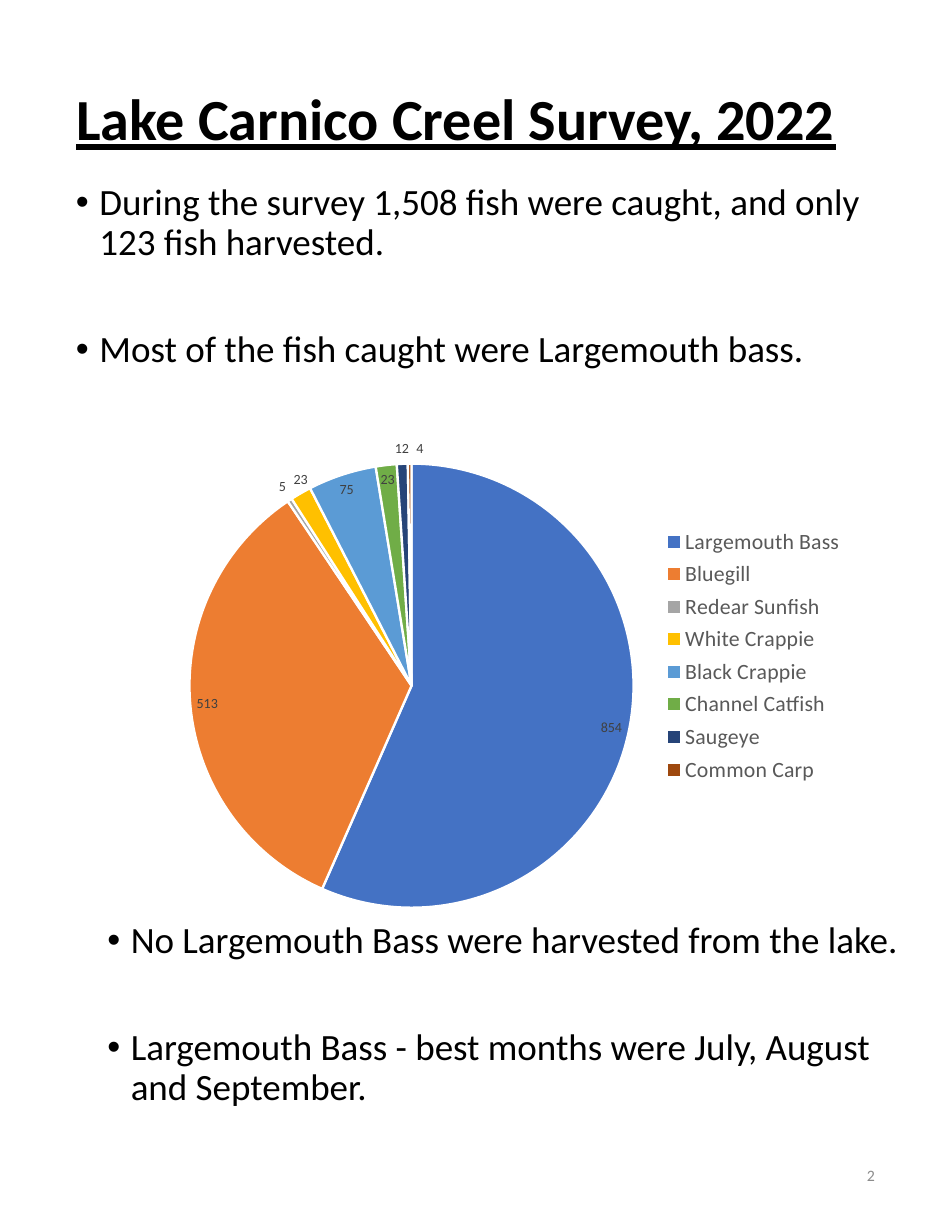
"""Build the Lake Carnico creel survey slide with its catch pie chart."""
from lxml import etree
from pptx import Presentation
from pptx.chart.data import CategoryChartData
from pptx.dml.color import RGBColor
from pptx.enum import chart as ch, text as t
from pptx.oxml import parse_xml
from pptx.oxml.ns import nsdecls, qn
from pptx.util import Inches, Pt

BLACK = RGBColor(0x00, 0x00, 0x00)
WHITE = RGBColor(0xFF, 0xFF, 0xFF)
PAGE_GREY = RGBColor(0x8C, 0x8C, 0x8C)
LEGEND_GREY = RGBColor(0x59, 0x59, 0x59)
LABEL_GREY = RGBColor(0x40, 0x40, 0x40)
FONT = "Calibri"
CATCH = [
    ("Largemouth Bass", 854, RGBColor(0x44, 0x72, 0xC4)),
    ("Bluegill", 513, RGBColor(0xED, 0x7D, 0x31)),
    ("Redear Sunfish", 5, RGBColor(0xA5, 0xA5, 0xA5)),
    ("White Crappie", 23, RGBColor(0xFF, 0xC0, 0x00)),
    ("Black Crappie", 75, RGBColor(0x5B, 0x9B, 0xD5)),
    ("Channel Catfish", 23, RGBColor(0x70, 0xAD, 0x47)),
    ("Saugeye", 12, RGBColor(0x26, 0x44, 0x78)),
    ("Common Carp", 4, RGBColor(0x9E, 0x48, 0x0E)),
]


def write(frame, lines, size, color=BLACK, bold=False, underline=False, align=t.PP_ALIGN.LEFT,
          anchor=t.MSO_ANCHOR.TOP, spacing=0.9, before=0, gap=0, bullet=False):
    frame.word_wrap = True
    frame.auto_size = t.MSO_AUTO_SIZE.NONE
    frame.vertical_anchor = anchor
    for number, line in enumerate(lines):
        para = frame.add_paragraph() if number else frame.paragraphs[0]
        para.alignment = align
        para.line_spacing = spacing
        para.space_before = Pt(before + gap * (number > 0))
        run = para.add_run()
        run.text = line
        run.font.name, run.font.size = FONT, Pt(size)
        run.font.bold, run.font.underline = bold, underline
        run.font.color.rgb = color
        if bullet:
            props = para._p.get_or_add_pPr()
            props.set("marL", str(Inches(0.21)))
            props.set("indent", str(-Inches(0.21)))
            etree.SubElement(props, qn("a:buFont")).set("typeface", "Arial")
            etree.SubElement(props, qn("a:buChar")).set("char", "•")


def manual_layout(x, y, w, h, target=""):
    return parse_xml(
        f'<c:layout {nsdecls("c")}><c:manualLayout>{target}'
        '<c:xMode val="edge"/><c:yMode val="edge"/>'
        f'<c:x val="{x}"/><c:y val="{y}"/><c:w val="{w}"/><c:h val="{h}"/>'
        '</c:manualLayout></c:layout>')


prs = Presentation()
prs.slide_width, prs.slide_height = Inches(8.5), Inches(11)
slide = prs.slides.add_slide(prs.slide_layouts[5])

title = slide.shapes.title
title.left, title.top, title.width, title.height = map(Inches, (0.58, 0.59, 7.33, 1))
write(title.text_frame, ["Lake Carnico Creel Survey, 2022"], 37.4, bold=True, underline=True,
      anchor=t.MSO_ANCHOR.MIDDLE)

findings = [
    (0.58, 1.59, ["During the survey 1,508 fish were caught, and only 123 fish harvested.",
                  "Most of the fish caught were Largemouth bass."]),
    (0.86, 8.18, ["No Largemouth Bass were harvested from the lake.",
                  "Largemouth Bass - best months were July, August and September."]),
]
for left, top, points in findings:
    body = slide.shapes.add_textbox(Inches(left), Inches(top), Inches(7.33), Inches(2.95))
    write(body.text_frame, points, 23.8, before=8.5, gap=34.6, bullet=True)

page_number = slide.shapes.add_textbox(Inches(6), Inches(10.2), Inches(1.91), Inches(0.59))
write(page_number.text_frame, ["2"], 10.2, PAGE_GREY, align=t.PP_ALIGN.RIGHT,
      anchor=t.MSO_ANCHOR.MIDDLE, spacing=1.0)

catch_data = CategoryChartData()
catch_data.categories = [species for species, _, _ in CATCH]
catch_data.add_series("Series 1", [count for _, count, _ in CATCH])
pie = slide.shapes.add_chart(ch.XL_CHART_TYPE.PIE, Inches(-0.29), Inches(3.79),
                             Inches(7.93), Inches(4.86), catch_data).chart
pie.has_title = False
pie.font.name, pie.font.size = FONT, Pt(10)
pie.font.color.rgb = BLACK

plot = pie.plots[0]
plot.vary_by_categories = True
for index, (_, _, color) in enumerate(CATCH):
    slice_format = plot.series[0].points[index].format
    slice_format.fill.solid()
    slice_format.fill.fore_color.rgb = color
    slice_format.line.color.rgb = WHITE
    slice_format.line.width = Pt(1.5)

plot.has_data_labels = True
labels = plot.data_labels
labels.show_value = True
labels.show_percentage = False
labels.position = ch.XL_LABEL_POSITION.BEST_FIT
labels.font.name, labels.font.size = FONT, Pt(9)
labels.font.color.rgb = LABEL_GREY

pie.has_legend = True
legend = pie.legend
legend.position = ch.XL_LEGEND_POSITION.BOTTOM
legend.include_in_layout = False
legend.font.name, legend.font.size = FONT, Pt(14)
legend.font.color.rgb = LEGEND_GREY
legend._element.find(qn("c:legendPos")).addnext(manual_layout(0.78, 0.18, 0.21, 0.49))

plot_area = pie._chartSpace.chart.plotArea
for automatic in plot_area.findall(qn("c:layout")):
    plot_area.remove(automatic)
plot_area.insert(0, manual_layout(0.25, 0.07, 0.5, 0.82, '<c:layoutTarget val="inner"/>'))

prs.save("out.pptx")
